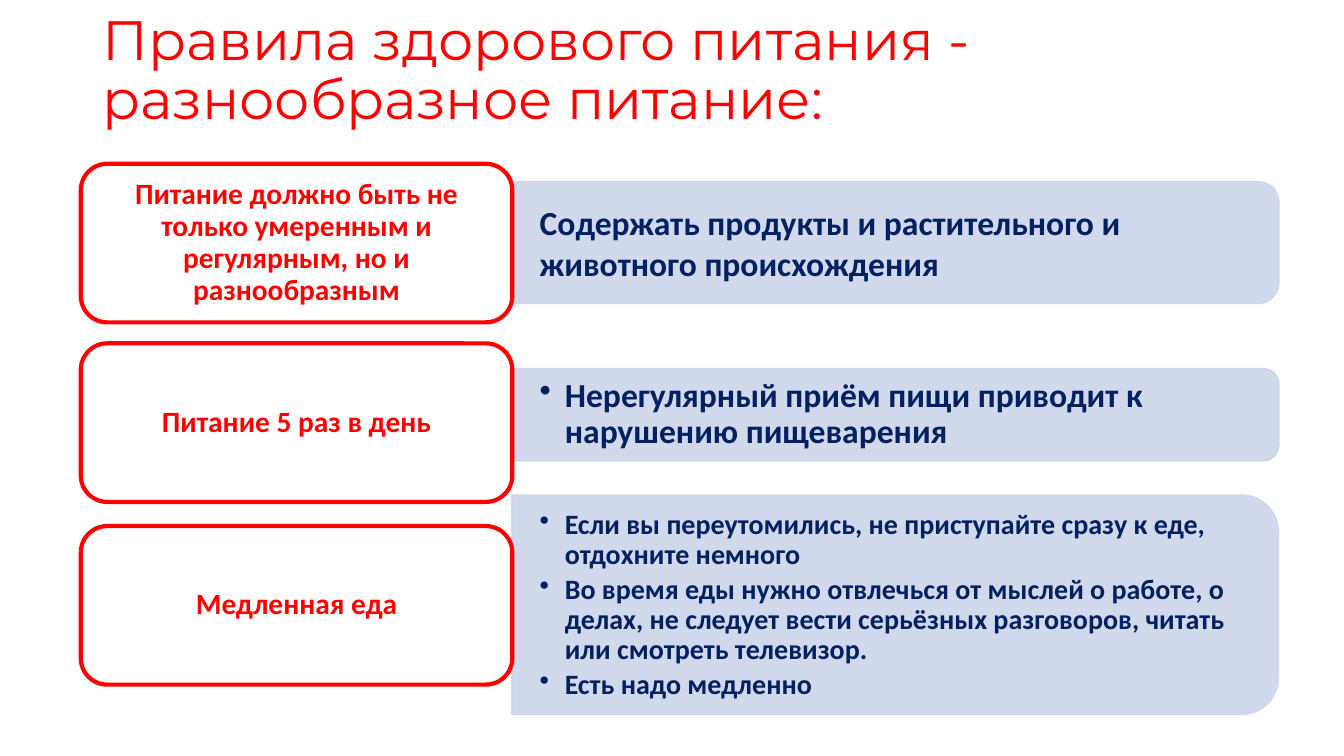
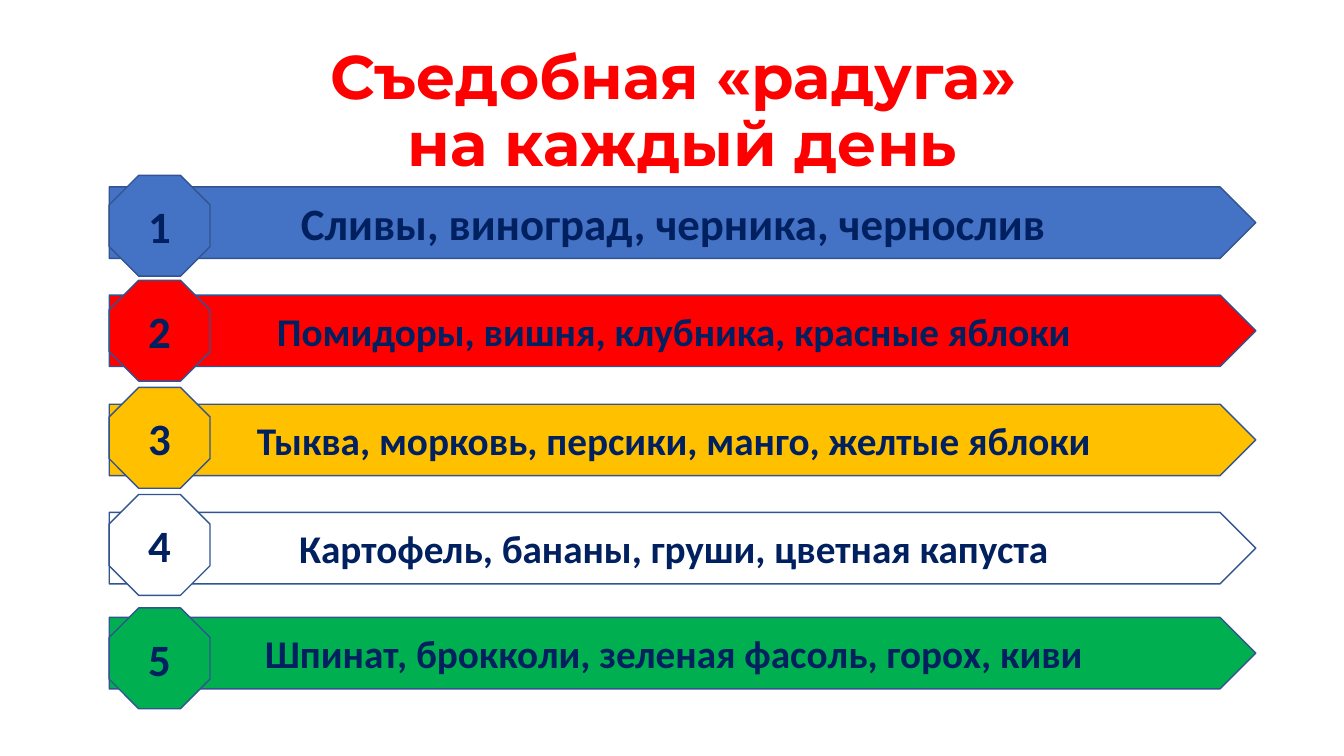
from dataclasses import dataclass

from lxml import etree
from pptx import Presentation
from pptx import util as u
from pptx.dml.color import RGBColor
from pptx.enum import shapes, text
from pptx.oxml.ns import qn

PX = 9525  # EMU per px, 96 px to the inch
COLORS = {
    "red": "FF0000",
    "navy": "002060",
    "mist": "CFD5EA",
    "white": "FFFFFF",
    "blue": "4472C4",
    "amber": "FFC000",
    "green": "00B050",
    "edge": "325491",
}
BODY_FONT, TITLE_FONT = "Calibri", "Montserrat"
LEFT, CENTER = text.PP_ALIGN.LEFT, text.PP_ALIGN.CENTER
Box = tuple[int, int, int, int]


@dataclass(frozen=True)
class Rule:
    heading: str
    card_top: int
    panel_top: int
    panel_height: int
    details: tuple[str, ...]
    size: int = 24
    bulleted: bool = True


@dataclass(frozen=True)
class Stripe:
    color: str
    foods: str
    top: int
    badge_top: int
    size: int = 28


RULES = (
    Rule("Питание должно быть не только умеренным и регулярным, но и разнообразным",
         156, 173, 116,
         ("Содержать продукты и растительного и животного происхождения",),
         bulleted=False),
    Rule("Питание 5 раз в день", 327, 351, 88,
         ("Нерегулярный приём пищи приводит к нарушению пищеварения",)),
    Rule("Медленная еда", 501, 472, 209,
         ("Если вы переутомились, не приступайте сразу к еде, отдохните немного",
          "Во время еды нужно отвлечься от мыслей о работе, о делах, "
          "не следует вести серьёзных разговоров, читать или смотреть телевизор.",
          "Есть надо медленно"), size=20),
)
STRIPES = (
    Stripe("blue", "Сливы, виноград, черника, чернослив", 178, 167, size=32),
    Stripe("red", "Помидоры, вишня, клубника, красные яблоки", 281, 267),
    Stripe("amber", "Тыква, морковь, персики, манго, желтые яблоки", 385, 369),
    Stripe("white", "Картофель, бананы, груши, цветная капуста", 488, 471),
    Stripe("green", "Шпинат, брокколи, зеленая фасоль, горох, киви", 588, 579),
)


def emu(px: float) -> int:
    return round(px * PX)


def rgb(name: str) -> RGBColor:
    return RGBColor.from_string(COLORS[name])


def write(shape, *lines: str, size: float, color: str, font: str = BODY_FONT,
          bold: bool = True, align=CENTER, spacing: float = 1.0, after: float = 0,
          bullet_indent: int = 0, inset: tuple[int, int] = (10, 5)) -> None:
    """Fill a shape with paragraphs; inset is (sides, top and bottom) in px."""
    frame = shape.text_frame
    frame.word_wrap = True
    frame.auto_size = text.MSO_AUTO_SIZE.NONE
    frame.vertical_anchor = text.MSO_ANCHOR.MIDDLE
    frame.margin_left = frame.margin_right = emu(inset[0])
    frame.margin_top = frame.margin_bottom = emu(inset[1])
    frame.text = "\n".join(lines)
    for paragraph in frame.paragraphs:
        paragraph.alignment = align
        paragraph.line_spacing = spacing
        paragraph.space_after = u.Pt(after)
        if bullet_indent:
            props = paragraph._p.get_or_add_pPr()
            props.set("marL", str(emu(bullet_indent)))
            props.set("indent", str(-emu(bullet_indent)))
            etree.SubElement(props, qn("a:buChar")).set("char", "•")
        for run in paragraph.runs:
            run.font.name = font
            run.font.size = u.Pt(size)
            run.font.bold = bold
            run.font.color.rgb = rgb(color)


def add_block(slide, kind, box: Box, fill: str, edge: str, weight: float = 1):
    block = slide.shapes.add_shape(kind, *map(emu, box))
    block.shadow.inherit = False
    block.fill.solid()
    block.fill.fore_color.rgb = rgb(fill)
    block.line.color.rgb = rgb(edge)
    block.line.width = u.Pt(weight)
    return block


def add_titled_slide(prs, title: str, box: Box, **style):
    slide = prs.slides.add_slide(prs.slide_layouts[5])
    heading = slide.shapes.title
    heading.left, heading.top, heading.width, heading.height = map(emu, box)
    write(heading, title, color="red", font=TITLE_FONT, spacing=0.9, **style)
    return slide


def add_panel(slide, rule: Rule) -> None:
    left, width, height = 488, 730, rule.panel_height
    # A quarter turn puts the two rounded corners on the right
    turned: Box = (left + (width - height) // 2,
                   rule.panel_top + (height - width) // 2, height, width)
    panel = add_block(slide, shapes.MSO_SHAPE.ROUND_2_SAME_RECTANGLE, turned, "mist", "mist")
    panel.rotation = 90
    for tint in panel._element.spPr.iter(qn("a:srgbClr")):
        etree.SubElement(tint, qn("a:alpha")).set("val", "90000")

    # Text keeps clear of the rounded corners
    corner = round(height * 0.049)
    details = slide.shapes.add_textbox(*map(emu, (
        left, rule.panel_top + corner, width - corner, height - 2 * corner)))
    write(details, *rule.details, size=rule.size, color="navy", align=LEFT,
          spacing=0.9 if rule.bulleted else 1.0, after=3 if rule.bulleted else 0,
          bullet_indent=24 if rule.bulleted else 0, inset=(26, 13))


def build_rules(prs) -> None:
    slide = add_titled_slide(prs, "Правила здорового питания - разнообразное питание:",
                             (88, 10, 965, 117), size=39.6, bold=False, align=LEFT)
    for rule in RULES:
        add_panel(slide, rule)
        card = add_block(slide, shapes.MSO_SHAPE.ROUNDED_RECTANGLE,
                         (77, rule.card_top, 411, 151), "white", "red", weight=3)
        write(card, rule.heading, size=21, color="red", spacing=0.9, inset=(9, 4))


def build_rainbow(prs) -> None:
    slide = add_titled_slide(prs, "Съедобная «радуга» \vна каждый день",
                             (50, 38, 1200, 139), size=44)
    left = 104
    # Arrows first, so that the number badges lie over them
    for stripe in STRIPES:
        arrow = add_block(slide, shapes.MSO_SHAPE.PENTAGON,
                          (left, stripe.top, 1092, 68), stripe.color, "edge")
        write(arrow, stripe.foods, size=stripe.size, color="navy")
    for number, stripe in enumerate(STRIPES, start=1):
        badge = add_block(slide, shapes.MSO_SHAPE.OCTAGON,
                          (left, stripe.badge_top, 96, 96), stripe.color, "edge")
        write(badge, str(number), size=32, color="navy")


def main() -> None:
    prs = Presentation()
    prs.slide_width, prs.slide_height = emu(1280), emu(720)
    build_rules(prs)
    build_rainbow(prs)
    prs.save("out.pptx")


if __name__ == "__main__":
    main()
